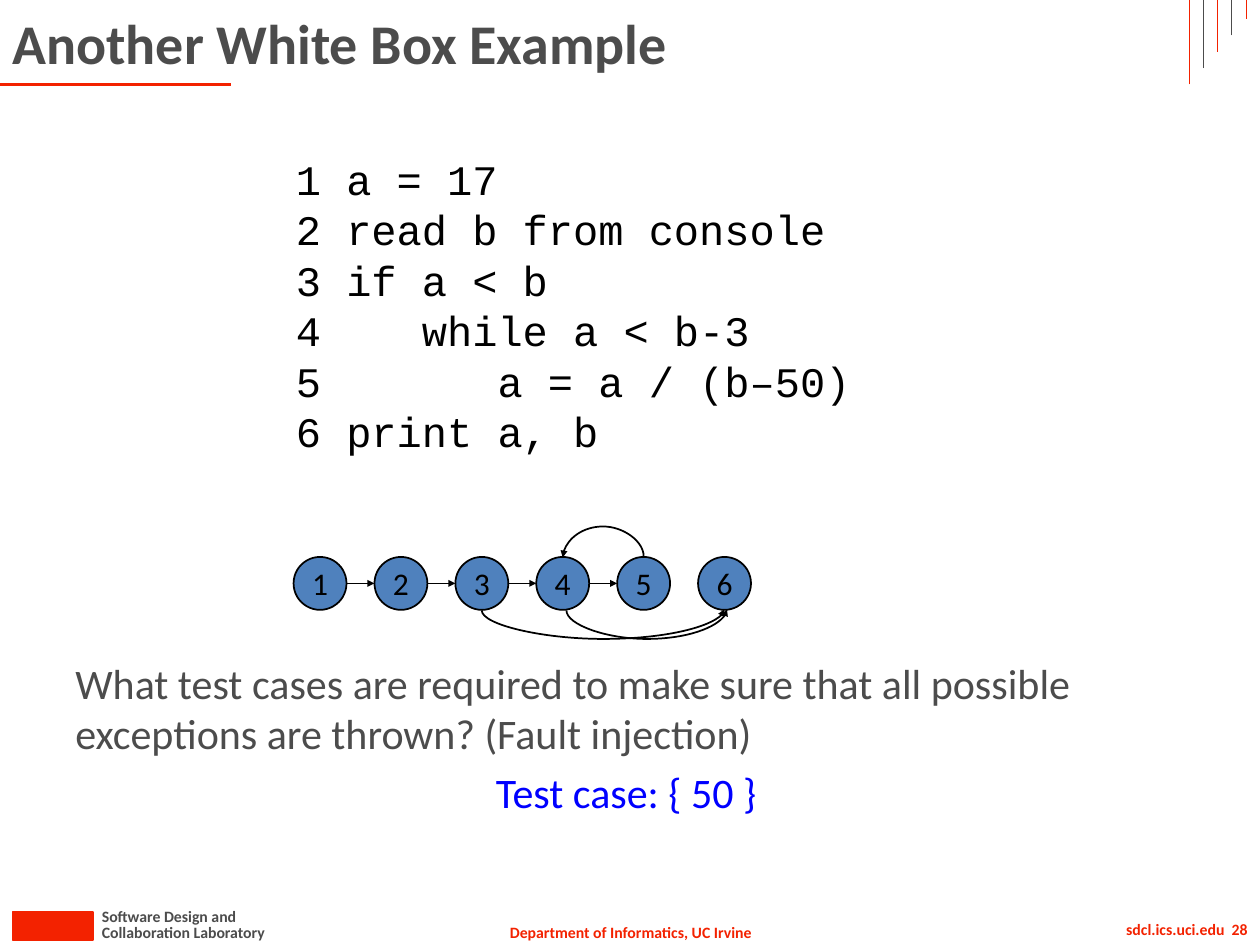
from lxml.etree import SubElement
from pptx import Presentation
from pptx.dml.color import RGBColor
from pptx.enum.shapes import MSO_CONNECTOR, MSO_SHAPE
from pptx.enum.text import MSO_ANCHOR, PP_ALIGN
from pptx.oxml.ns import qn
from pptx.util import Inches, Pt

COLORS = {
    "red": "F32200",
    "gray": "4C4C4C",
    "black": "000000",
    "blue": "0000FF",
    "node": "4F81BD",
}


class SlideBuilder:
    font = "Calibri"

    def __init__(self, slide):
        self.slide = slide

    def color(self, name):
        return RGBColor.from_string(COLORS[name])

    def style(self, paragraph, size, color, bold=False, font=None, align=PP_ALIGN.LEFT):
        paragraph.alignment = align
        for run in paragraph.runs:
            run.font.name = font or self.font
            run.font.size = Pt(size)
            run.font.bold = bold
            run.font.color.rgb = self.color(color)

    def text(self, box, content, size, color, wrap=True, anchor=MSO_ANCHOR.TOP, **look):
        frame = self.slide.shapes.add_textbox(*map(Inches, box)).text_frame
        frame.word_wrap = wrap
        frame.vertical_anchor = anchor
        frame.text = content
        for paragraph in frame.paragraphs:
            self.style(paragraph, size, color, **look)
        return frame

    def shape(self, kind, box, fill, outline):
        shape = self.slide.shapes.add_shape(kind, *map(Inches, box))
        shape.shadow.inherit = False
        shape.fill.solid()
        shape.fill.fore_color.rgb = self.color(fill)
        shape.line.color.rgb = self.color(outline)
        shape.line.width = Pt(1)
        return shape

    def node(self, label, left, top, size):
        frame = self.shape(MSO_SHAPE.OVAL, (left, top, size, size), "node", "black").text_frame
        frame.word_wrap = False
        frame.vertical_anchor = MSO_ANCHOR.MIDDLE
        frame.text = label
        self.style(frame.paragraphs[0], 18, "black", align=PP_ALIGN.CENTER)

    def line(self, start, end, color="black", width=1, arrow=None, kind=MSO_CONNECTOR.STRAIGHT):
        connector = self.slide.shapes.add_connector(kind, *map(Inches, (*start, *end)))
        connector.line.color.rgb = self.color(color)
        connector.line.width = Pt(width)
        properties = connector._element.spPr
        if arrow:
            SubElement(properties.find(qn("a:ln")), qn(f"a:{arrow}"), type="triangle", w="sm", len="sm")
        SubElement(properties, qn("a:effectLst"))
        return connector

    def loop(self, left, right, y, rise, arrow):
        middle, half_span, half_width = (left + right) / 2, (right - left) / 2, 0.005
        connector = self.line(
            (middle - half_width, y - half_span), (middle + half_width, y + half_span),
            arrow=arrow, kind=MSO_CONNECTOR.CURVE)
        properties = connector._element.spPr
        transform = properties.find(qn("a:xfrm"))
        for key, value in (("rot", "5400000"), ("flipH", "1"), ("flipV", "1")):
            transform.set(key, value)
        geometry = properties.find(qn("a:prstGeom"))
        adjustments = geometry.find(qn("a:avLst"))
        if adjustments is None:
            adjustments = SubElement(geometry, qn("a:avLst"))
        bend = round(rise / (2 * half_width) * 100000)
        SubElement(adjustments, qn("a:gd"), name="adj1", fmla=f"val {bend}")


def add_frame(builder):
    builder.text((3.93, 7.27, 2.15, 0.25), "Department of Informatics, UC Irvine", 9, "red",
                 wrap=False, bold=True, align=PP_ALIGN.CENTER)
    builder.shape(MSO_SHAPE.RECTANGLE, (0.1, 7.24, 0.64, 0.22), "red", "red")
    builder.text((0.71, 7.27, 1.53, 0.25), "Collaboration Laboratory", 9, "gray", wrap=False, bold=True)
    builder.text((0.71, 7.15, 1.29, 0.25), "Software Design and", 9, "gray", wrap=False, bold=True)
    builder.text((7.84, 7.25, 2.16, 0.25), "sdcl.ics.uci.edu  28", 9, "red",
                 bold=True, align=PP_ALIGN.RIGHT)
    builder.line((0, 0.67), (1.83, 0.67), "red", 1.5)
    for index in range(5):
        x = 9.44 + 0.1125 * index
        builder.line((x, 0.67 - 0.13 * index), (x, 0), "gray" if index % 2 else "red", 0.5)


def add_flow_graph(builder):
    size, left, top, pitch = 0.42, 2.33, 4.42, 0.642
    lefts = [left + pitch * index for index in range(6)]
    centers = [x + size / 2 for x in lefts]
    middle, bottom = top + size / 2, top + size
    for number, x in enumerate(lefts, 1):
        builder.node(str(number), x, top, size)
    for here, following in zip(lefts[:4], lefts[1:5]):
        builder.line((here + size, middle), (following, middle), arrow="tailEnd")
    builder.loop(centers[2], centers[5], bottom, -0.23, "tailEnd")
    builder.loop(centers[3] + 0.03, centers[5] + 0.02, bottom, -0.23, "tailEnd")
    builder.loop(centers[3], centers[4], top, 0.25, "headEnd")


def main():
    deck = Presentation()
    deck.slide_width, deck.slide_height = Inches(10), Inches(7.5)
    builder = SlideBuilder(deck.slides.add_slide(deck.slide_layouts[6]))
    add_frame(builder)
    builder.text((0, 0, 9, 0.67), "Another White Box Example", 32, "gray",
                 anchor=MSO_ANCHOR.MIDDLE, bold=True)

    question = builder.text(
        (0.5, 5.17, 8.94, 1.53),
        "What test cases are required to make sure that all possible exceptions are thrown? "
        "(Fault injection)\nTest case: { 50 }", 24, "gray")
    for paragraph in question.paragraphs:
        paragraph.space_before = Pt(4.8)
    builder.style(question.paragraphs[1], 24, "blue", align=PP_ALIGN.CENTER)

    program = (
        "1 a = 17",
        "2 read b from console",
        "3 if a < b",
        "4    while a < b-3",
        "5       a = a / (b–50)",
        "6 print a, b",
    )
    builder.text((2.25, 1.17, 4.83, 2.93), "\n".join(program), 24, "black", font="Courier New")
    add_flow_graph(builder)
    deck.save("out.pptx")


if __name__ == "__main__":
    main()
